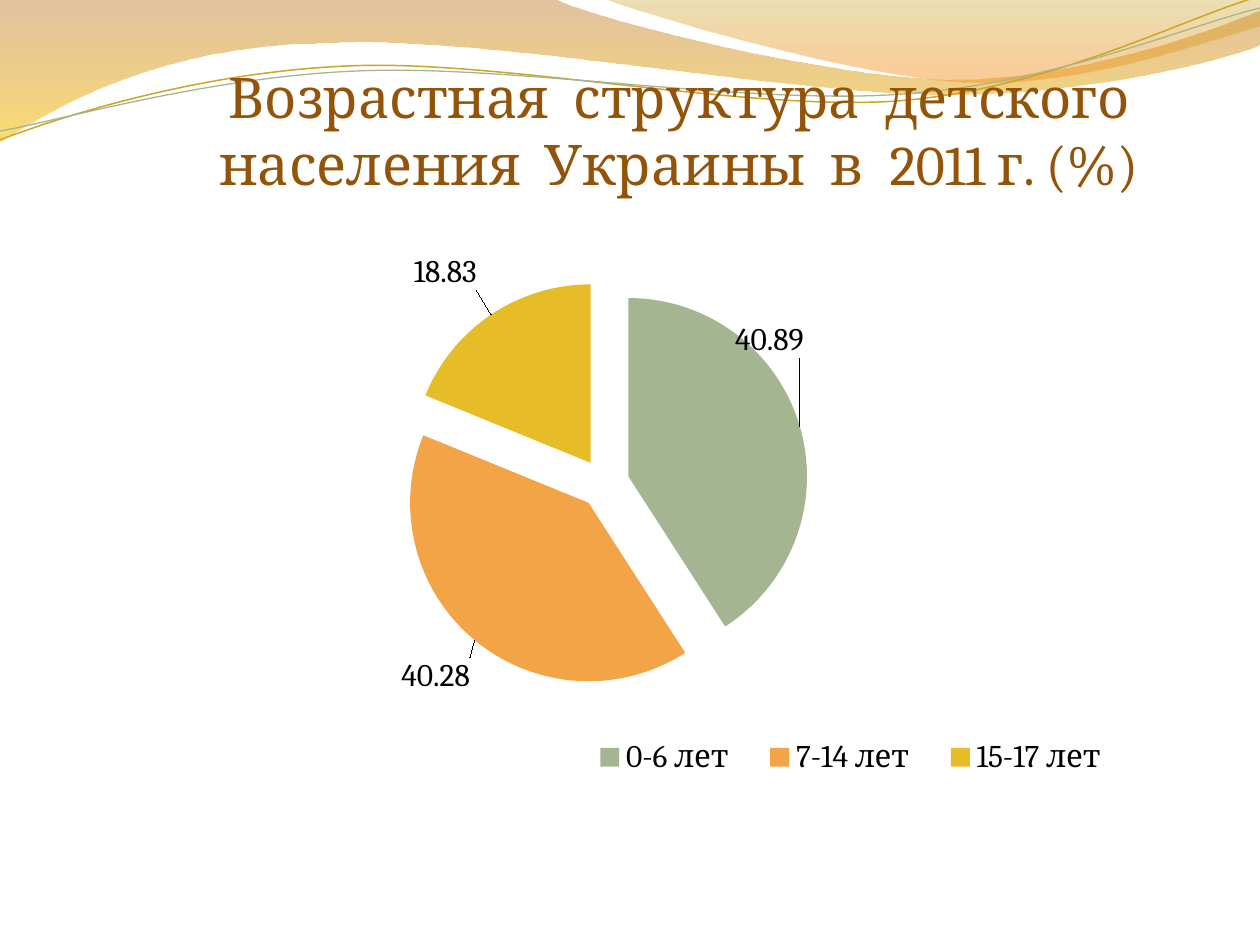
import math

import pptx
import pptx.chart.data
import pptx.dml.color
import pptx.enum.chart
import pptx.enum.text
import pptx.oxml
import pptx.oxml.ns
import pptx.util

RGB = pptx.dml.color.RGBColor
qn = pptx.oxml.ns.qn
PX = 914400 / 126
FONT = "Cambria"
BROWN = RGB(0x93, 0x54, 0x0A)
BLACK = RGB(0, 0, 0)
GOLD = RGB(0xCC, 0xA6, 0x24)
SAGE = RGB(0xA5, 0xB5, 0x92)
ORANGE = RGB(0xF3, 0xA4, 0x47)
YELLOW = RGB(0xE7, 0xBC, 0x29)

TITLE = "Возрастная  структура  детского населения  Украины  в  2011 г. (%)"
TITLE_BOX = (108, 39, 1142, 158)
CHART_BOX = (108, 207, 1024, 595)
PLOT_AREA = (0.17, 0.09, 0.63, 0.75)
LEGEND_AREA = (0.45, 0.88, 0.55, 0.09)
SERIES_EXPLOSION = 25
SLICE_EXPLOSION = 14
# category, value, colour, label shift as a share of the chart
SLICES = [
    ("0-6 лет", 40.89, SAGE, (-0.07, -0.11)),
    ("7-14 лет", 40.28, ORANGE, (0, 0.02)),
    ("15-17 лет", 18.83, YELLOW, (-0.01, -0.03)),
]

# A step of one point is a straight line, a step of three points is a Bezier curve.
# Gradient stops are position, colour, opacity in percent.
BANDS = [
    ([[(0, 0)], [(554, -1)],
      [(600, 21), (837, 79), (955, 79)], [(1075, 79), (1207, 33), (1260, 11)],
      [(1261, 45)], [(1239, 55), (1096, 96), (940, 94)],
      [(784, 94), (481, 35), (324, 43)], [(163, 45), (58, 105), (-1, 142)], [(0, 0)]],
     [(0, RGB(0xC0, 0x7A, 0x28), 45), (1, RGB(0xF7, 0xBF, 0x00), 55)]),
    ([[(604, -1)], [(641, 14), (859, 78), (969, 82)],
      [(1079, 87), (1211, 40), (1260, 26)], [(1260, 0)], [(604, -1)]],
     [(0, RGB(0xC0, 0x97, 0x09), 30), (0.8, RGB(0xF5, 0x93, 0x20), 45)]),
]
WAVE_CENTER = (629, 73)
WAVE_TILT = -2.7
WAVES = [
    ([[(0, 140)], [(60, 117), (199, 72), (349, 66)],
      [(497, 59), (747, 112), (898, 101)], [(1050, 89), (1182, 19), (1257, -3)]],
     GOLD, 0.85),
    ([[(0, 131)], [(59, 121), (207, 77), (357, 71)],
      [(508, 64), (752, 106), (903, 94)], [(1053, 84), (1186, 26), (1260, 8)]],
     SAGE, 0.75),
]


def emu(box):
    return [round(length * PX) for length in box]


def chart_node(tag, attributes="", content=""):
    return pptx.oxml.parse_xml(
        f'<c:{tag} {pptx.oxml.ns.nsdecls("c")} {attributes}>{content}</c:{tag}>')


def level(point):
    """Turn a point of a tilted wave back to where it lies before the tilt."""
    angle = math.radians(-WAVE_TILT)
    x, y = (value - center for value, center in zip(point, WAVE_CENTER))
    return (WAVE_CENTER[0] + x * math.cos(angle) - y * math.sin(angle),
            WAVE_CENTER[1] + x * math.sin(angle) + y * math.cos(angle))


def add_outline(page, steps, close):
    points = [emu(point) for step in steps for point in step]
    builder = page.shapes.build_freeform(*points[0])
    builder.add_line_segments(points[1:], close=close)
    shape = builder.convert_to_shape()
    shape.shadow.inherit = False
    # Join each group of three line ends into one Bezier curve
    lines = iter(shape._element.findall(".//" + qn("a:lnTo")))
    for step in steps[1:]:
        ends = [next(lines) for _ in step]
        if len(step) == 3:
            curve = pptx.oxml.parse_xml(
                f'<a:cubicBezTo {pptx.oxml.ns.nsdecls("a")}/>')
            ends[0].addprevious(curve)
            for end in ends:
                curve.append(end[0])
                end.getparent().remove(end)
    return shape


def add_band(page, steps, stops):
    band = add_outline(page, steps, True)
    band.line.fill.background()
    band.fill.gradient()
    band.fill.gradient_angle = 270
    for stop, (position, color, opacity) in zip(band.fill.gradient_stops, stops):
        stop.position = position
        stop.color.rgb = color
        stop._gs.find(qn("a:srgbClr")).append(pptx.oxml.parse_xml(
            f'<a:alpha {pptx.oxml.ns.nsdecls("a")} val="{opacity * 1000}"/>'))


def add_wave(page, steps, color, width):
    wave = add_outline(page, [[level(point) for point in step] for step in steps], False)
    wave.rotation = WAVE_TILT
    wave.fill.background()
    wave.line.color.rgb = color
    wave.line.width = pptx.util.Pt(width)


def manual_layout(values, is_area=True, inner=False):
    """Chart layout node: an area (x, y, w, h) or a shift (x, y)."""
    parts = ['<c:layoutTarget val="inner"/>'] if inner else []
    if is_area:
        parts += ['<c:xMode val="edge"/>', '<c:yMode val="edge"/>']
    parts += [f'<c:{name} val="{value}"/>' for name, value in zip("xywh", values)]
    return chart_node("layout", content=f'<c:manualLayout>{"".join(parts)}</c:manualLayout>')


def add_pie(page):
    data = pptx.chart.data.CategoryChartData(number_format="0.00")
    data.categories = [name for name, *_ in SLICES]
    data.add_series("Series 1", [value for _, value, *_ in SLICES])
    chart = page.shapes.add_chart(
        pptx.enum.chart.XL_CHART_TYPE.PIE, *emu(CHART_BOX), data).chart
    chart.has_title = False
    chart.font.name = FONT
    chart.font.size = pptx.util.Pt(18)
    chart.font.color.rgb = BLACK
    chart.has_legend = True
    chart.legend.position = pptx.enum.chart.XL_LEGEND_POSITION.BOTTOM
    chart.legend.include_in_layout = False

    legend_node = chart.legend._element
    plot_node = chart._chartSpace.find(".//" + qn("c:plotArea"))
    for node in (legend_node, plot_node):
        for layout in node.findall(qn("c:layout")):
            node.remove(layout)
    legend_node.find(qn("c:legendPos")).addnext(manual_layout(LEGEND_AREA))
    plot_node.insert(0, manual_layout(PLOT_AREA, inner=True))

    series = chart.plots[0].series[0]
    series._element.find(qn("c:tx")).addnext(
        chart_node("explosion", f'val="{SERIES_EXPLOSION}"'))
    series.data_labels.show_value = True
    series.data_labels.number_format = "0.00"
    series.data_labels.number_format_is_linked = False
    for index, (_, _, color, shift) in enumerate(SLICES):
        point = series.points[index]
        point.format.fill.solid()
        point.format.fill.fore_color.rgb = color
        point_node = series._element.findall(qn("c:dPt"))[index]
        point_node.find(qn("c:spPr")).addprevious(
            chart_node("explosion", f'val="{SLICE_EXPLOSION}"'))
        point.data_label.position = pptx.enum.chart.XL_LABEL_POSITION.OUTSIDE_END
        label = series._element.findall(".//" + qn("c:dLbl"))[index]
        label.find(qn("c:idx")).addnext(manual_layout(shift, is_area=False))


def set_title(page):
    title = page.shapes.title
    title.left, title.top, title.width, title.height = emu(TITLE_BOX)
    frame = title.text_frame
    frame.text = TITLE
    frame.word_wrap = True
    frame.auto_size = pptx.enum.text.MSO_AUTO_SIZE.NONE
    frame.vertical_anchor = pptx.enum.text.MSO_ANCHOR.BOTTOM
    frame.margin_left = frame.margin_right = frame.margin_bottom = 0
    para = frame.paragraphs[0]
    para.alignment = pptx.enum.text.PP_ALIGN.CENTER
    para.font.name = FONT
    para.font.size = pptx.util.Pt(32)
    para.font.color.rgb = BROWN
    page.shapes._spTree.append(title._element)  # in front of the waves


def main():
    deck = pptx.Presentation()
    deck.slide_width, deck.slide_height = emu((1260, 945))
    page = deck.slides.add_slide(deck.slide_layouts[5])
    for band in BANDS:
        add_band(page, *band)
    for wave in WAVES:
        add_wave(page, *wave)
    set_title(page)
    add_pie(page)
    deck.save("out.pptx")


if __name__ == "__main__":
    main()
